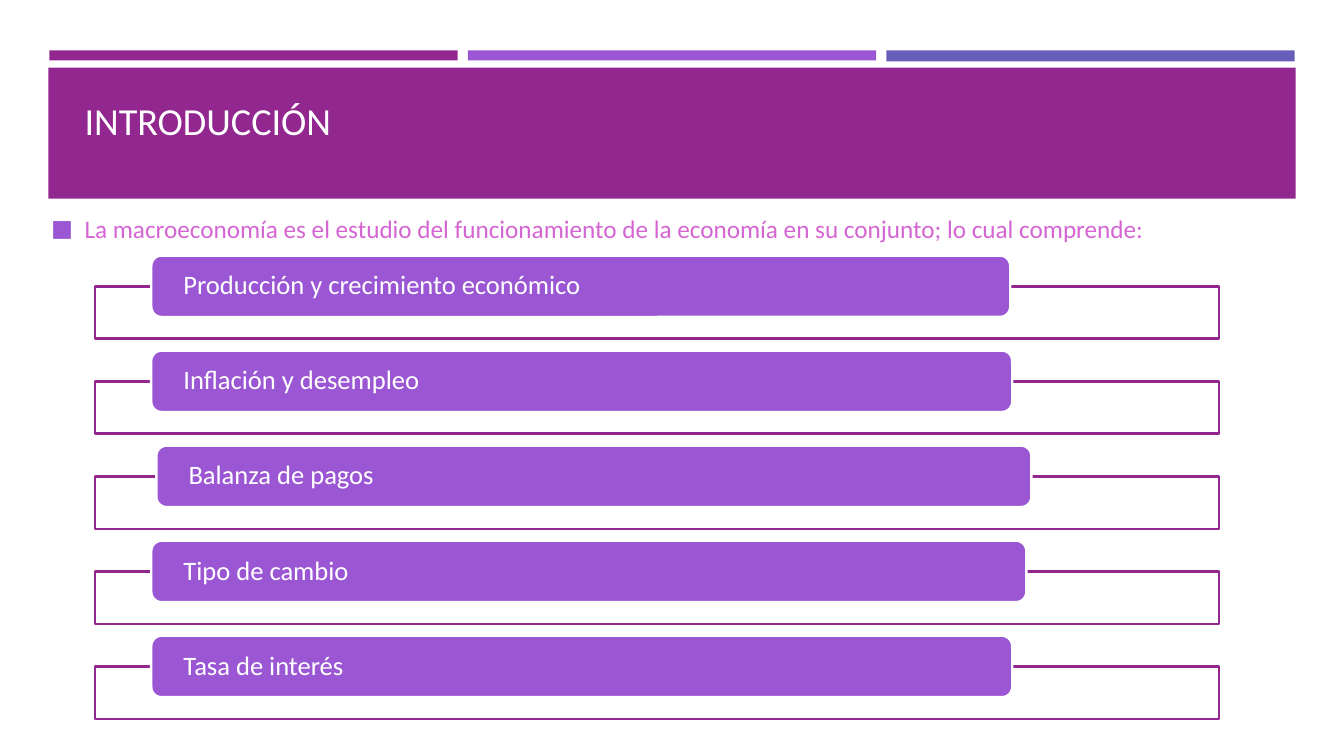
"""Build the introduction slide listing the topics of macroeconomics."""
import pptx
import pptx.dml.color
import pptx.enum.shapes
import pptx.enum.text
import pptx.oxml
import pptx.oxml.ns
import pptx.util
from lxml import etree

Inches = pptx.util.Inches
Pt = pptx.util.Pt
RGBColor = pptx.dml.color.RGBColor
Shape = pptx.enum.shapes.MSO_SHAPE
Anchor = pptx.enum.text.MSO_ANCHOR
Align = pptx.enum.text.PP_ALIGN
qn = pptx.oxml.ns.qn

PLUM = RGBColor(0x92, 0x27, 0x8F)
VIOLET = RGBColor(0x9B, 0x57, 0xD3)
INDIGO = RGBColor(0x66, 0x5E, 0xB8)
PINK = RGBColor(0xD5, 0x65, 0xD2)
WHITE = RGBColor(0xFF, 0xFF, 0xFF)

TITLE = "INTRODUCCIÓN"
INTRO = ("La macroeconomía es el estudio del funcionamiento de la economía "
         "en su conjunto; lo cual comprende:")
STRIPES = [(PLUM, 0.1), (VIOLET, 0.1), (INDIGO, 0.11)]
TOPICS = [
    ("Producción y crecimiento económico", 1.5, 8.52),
    ("Inflación y desempleo", 1.5, 8.54),
    ("Balanza de pagos", 1.55, 8.68),
    ("Tipo de cambio", 1.5, 8.68),
    ("Tasa de interés", 1.5, 8.54),
]
STRIPE_LEFT, STRIPE_STEP = 0.49, 4.15
FRAME_TOP, FRAME_STEP, LABEL_RISE = 2.84, 0.943, 0.305


def add_block(page, kind, left, top, width, height, fill, line=None):
    block = page.shapes.add_shape(kind, Inches(left), Inches(top),
                                  Inches(width), Inches(height))
    block.shadow.inherit = False
    block.fill.solid()
    block.fill.fore_color.rgb = fill
    if line is None:
        block.line.fill.background()
    else:
        block.line.color.rgb = line
        block.line.width = Pt(1.75)
    return block


def write(shape, text, *, size, color, anchor=Anchor.MIDDLE, inset=0.1,
          spacing=1.0, before=0, after=0):
    frame = shape.text_frame
    frame.word_wrap = True
    frame.vertical_anchor = anchor
    frame.margin_left = frame.margin_right = Inches(inset)
    para = frame.paragraphs[0]
    para.alignment = Align.LEFT
    para.line_spacing = spacing
    para.space_before = Pt(before)
    para.space_after = Pt(after)
    span = para.add_run()
    span.text = text
    span.font.name = "Calibri"
    span.font.size = Pt(size)
    span.font.color.rgb = color
    return para


def add_bullet(para, symbol, color, percent, indent):
    properties = para._p.get_or_add_pPr()
    properties.set("marL", str(Inches(indent)))
    properties.set("indent", str(-Inches(indent)))
    tint = etree.SubElement(properties, qn("a:buClr"))
    etree.SubElement(tint, qn("a:srgbClr"), val=str(color))
    etree.SubElement(properties, qn("a:buSzPct"), val=str(percent * 1000))
    etree.SubElement(properties, qn("a:buFont"), typeface="Calibri")
    etree.SubElement(properties, qn("a:buChar"), char=symbol)


def set_opacity(shape, percent):
    color = shape.fill._xPr.find(qn("a:solidFill"))[0]
    etree.SubElement(color, qn("a:alpha"), val=str(percent * 1000))


def main():
    deck = pptx.Presentation()
    deck.slide_width, deck.slide_height = Inches(13.33), Inches(7.5)
    page = deck.slides.add_slide(deck.slide_layouts[6])

    for index, (color, height) in enumerate(STRIPES):
        add_block(page, Shape.RECTANGLE, STRIPE_LEFT + index * STRIPE_STEP,
                  0.5, 4.05, height, color)
    add_block(page, Shape.RECTANGLE, 0.48, 0.67, 12.37, 1.3, PLUM)

    title = page.shapes.add_textbox(Inches(0.74), Inches(0.77),
                                    Inches(10.62), Inches(0.7))
    write(title, TITLE, size=27.3, color=WHITE, anchor=Anchor.BOTTOM)
    intro = page.shapes.add_textbox(Inches(0.41), Inches(1.26),
                                    Inches(11.68), Inches(2.01))
    para = write(intro, INTRO, size=18, color=PINK, before=3.6, after=6)
    add_bullet(para, "■", VIOLET, 92, 0.33)

    for index, (topic, left, width) in enumerate(TOPICS):
        top = FRAME_TOP + index * FRAME_STEP
        frame = add_block(page, Shape.RECTANGLE, 0.94, top, 11.15, 0.52,
                          WHITE, PLUM)
        set_opacity(frame, 90)
        label = add_block(page, Shape.ROUNDED_RECTANGLE, left,
                          top - LABEL_RISE, width, 0.61, VIOLET, WHITE)
        write(label, topic, size=19, color=WHITE, inset=0.29, spacing=0.9)

    deck.save("out.pptx")


if __name__ == "__main__":
    main()
